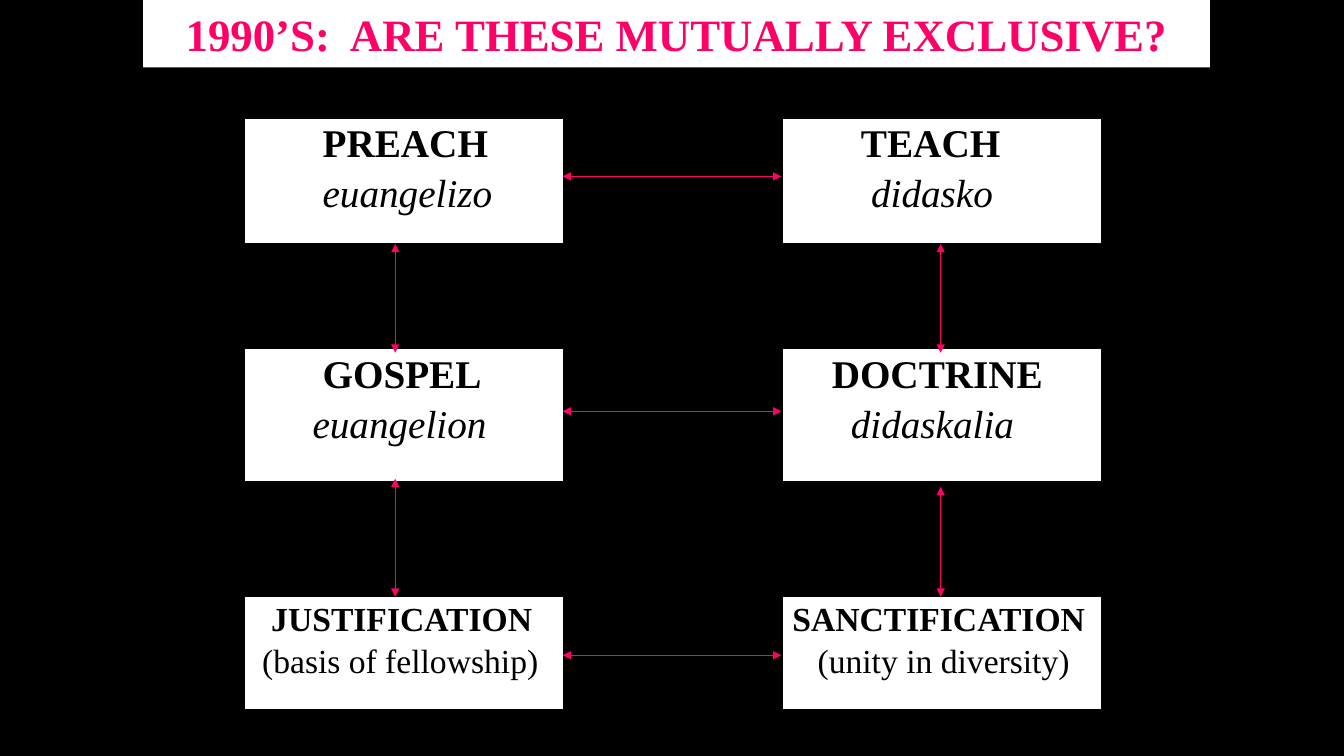
from typing import NamedTuple

from lxml.etree import SubElement
from pptx import Presentation
from pptx.dml.color import RGBColor
from pptx.enum.shapes import MSO_CONNECTOR, MSO_SHAPE
from pptx.enum.text import MSO_ANCHOR, PP_ALIGN
from pptx.oxml.ns import qn
from pptx.slide import Slide
from pptx.table import Table, _Cell
from pptx.util import Inches, Pt

BLACK = RGBColor(0, 0, 0)
WHITE = RGBColor(255, 255, 255)
PINK = RGBColor(255, 0, 102)
FONT = "Times New Roman"

COLUMN_WIDTHS = (3.17, 2.17, 3.17)
ROW_HEIGHTS = (1.25, 1.04, 1.32, 1.14, 1.13)
LEFT_X, RIGHT_X = 3.92, 9.33
GAP_START, GAP_END = 5.58, 7.75


class Concept(NamedTuple):
    row: int
    column: int
    term: str
    gloss: str
    term_indent: float
    gloss_indent: float
    size: int = 28
    italic_gloss: bool = True


class Arrow(NamedTuple):
    x1: float
    y1: float
    x2: float
    y2: float


CONCEPTS = (
    Concept(0, 0, "PREACH", "euangelizo", 0.68, 0.68),
    Concept(0, 2, "TEACH", "didasko", 0.68, 0.78),
    Concept(2, 0, "GOSPEL", "euangelion", 0.68, 0.58),
    Concept(2, 2, "DOCTRINE", "didaskalia", 0.39, 0.58),
    Concept(4, 0, "JUSTIFICATION", "(basis of fellowship)", 0.17, 0.08, 24, False),
    Concept(4, 2, "SANCTIFICATION", "(unity in diversity)", 0, 0.25, 24, False),
)

ARROWS = (
    *(Arrow(GAP_START, y, GAP_END, y) for y in (1.75, 4.08, 6.5)),
    *(Arrow(x, 2.42, x, 3.5) for x in (LEFT_X, RIGHT_X)),
    Arrow(LEFT_X, 4.75, LEFT_X, 5.92),
    Arrow(RIGHT_X, 4.83, RIGHT_X, 5.92),
)


def add_title(slide: Slide) -> None:
    banner = slide.shapes.add_shape(
        MSO_SHAPE.RECTANGLE, Inches(1.42), Inches(0), Inches(10.58), Inches(0.67)
    )
    banner.shadow.inherit = False
    banner.fill.solid()
    banner.fill.fore_color.rgb = WHITE
    banner.line.fill.background()
    frame = banner.text_frame
    frame.word_wrap = True
    frame.vertical_anchor = MSO_ANCHOR.MIDDLE
    frame.text = "1990’S:  ARE THESE MUTUALLY EXCLUSIVE?"
    heading = frame.paragraphs[0]
    heading.alignment = PP_ALIGN.CENTER
    font = heading.runs[0].font
    font.name, font.size, font.bold = FONT, Pt(32), True
    font.color.rgb = PINK


def set_borders(cell: _Cell, row: int, column: int) -> None:
    """Draw black borders, heavier along the outside of the table."""
    outer_edges = {
        "a:lnL": column == 0,
        "a:lnR": column == len(COLUMN_WIDTHS) - 1,
        "a:lnT": row == 0,
        "a:lnB": row == len(ROW_HEIGHTS) - 1,
    }
    properties = cell._tc.get_or_add_tcPr()
    for tag, is_outer in outer_edges.items():
        border = SubElement(properties, qn(tag), w=str(Pt(2.25 if is_outer else 1)))
        fill = SubElement(border, qn("a:solidFill"))
        SubElement(fill, qn("a:srgbClr"), val=str(BLACK))


def add_grid(slide: Slide) -> Table:
    grid = slide.shapes.add_table(
        len(ROW_HEIGHTS), len(COLUMN_WIDTHS), Inches(2.42), Inches(1.17),
        Inches(sum(COLUMN_WIDTHS)), Inches(sum(ROW_HEIGHTS)),
    ).table
    grid.first_row = grid.horz_banding = False
    for column, width in enumerate(COLUMN_WIDTHS):
        grid.columns[column].width = Inches(width)
    for row, height in enumerate(ROW_HEIGHTS):
        grid.rows[row].height = Inches(height)
        for column in range(len(COLUMN_WIDTHS)):
            cell = grid.cell(row, column)
            set_borders(cell, row, column)
            cell.fill.background()
    return grid


def fill_concept(grid: Table, concept: Concept) -> None:
    cell = grid.cell(concept.row, concept.column)
    cell.fill.solid()
    cell.fill.fore_color.rgb = WHITE
    cell.text_frame.text = f"{concept.term}\n{concept.gloss}"
    term, gloss = cell.text_frame.paragraphs
    indents = (concept.term_indent, concept.gloss_indent)
    for paragraph, indent in zip((term, gloss), indents):
        paragraph._p.get_or_add_pPr().set("marL", str(Inches(indent)))
        font = paragraph.runs[0].font
        font.name, font.size = FONT, Pt(concept.size)
        font.bold = paragraph is term
        font.italic = paragraph is gloss and concept.italic_gloss
        font.color.rgb = BLACK
    gloss.space_before = Pt(concept.size * 0.15)


def add_arrow(slide: Slide, arrow: Arrow) -> None:
    """Draw a line with a triangle at both ends."""
    connector = slide.shapes.add_connector(
        MSO_CONNECTOR.STRAIGHT, *(Inches(value) for value in arrow)
    )
    connector.line.color.rgb = PINK
    connector.line.width = Pt(0.75)
    line = connector.line._get_or_add_ln()
    for end in ("a:headEnd", "a:tailEnd"):
        SubElement(line, qn(end), type="triangle")
    SubElement(connector._element.spPr, qn("a:effectLst"))


def main() -> None:
    deck = Presentation()
    deck.slide_width, deck.slide_height = Inches(13.33), Inches(7.5)
    slide = deck.slides.add_slide(deck.slide_layouts[6])
    slide.background.fill.solid()
    slide.background.fill.fore_color.rgb = BLACK
    add_title(slide)
    grid = add_grid(slide)
    for concept in CONCEPTS:
        fill_concept(grid, concept)
    for arrow in ARROWS:
        add_arrow(slide, arrow)
    deck.save("out.pptx")


if __name__ == "__main__":
    main()
